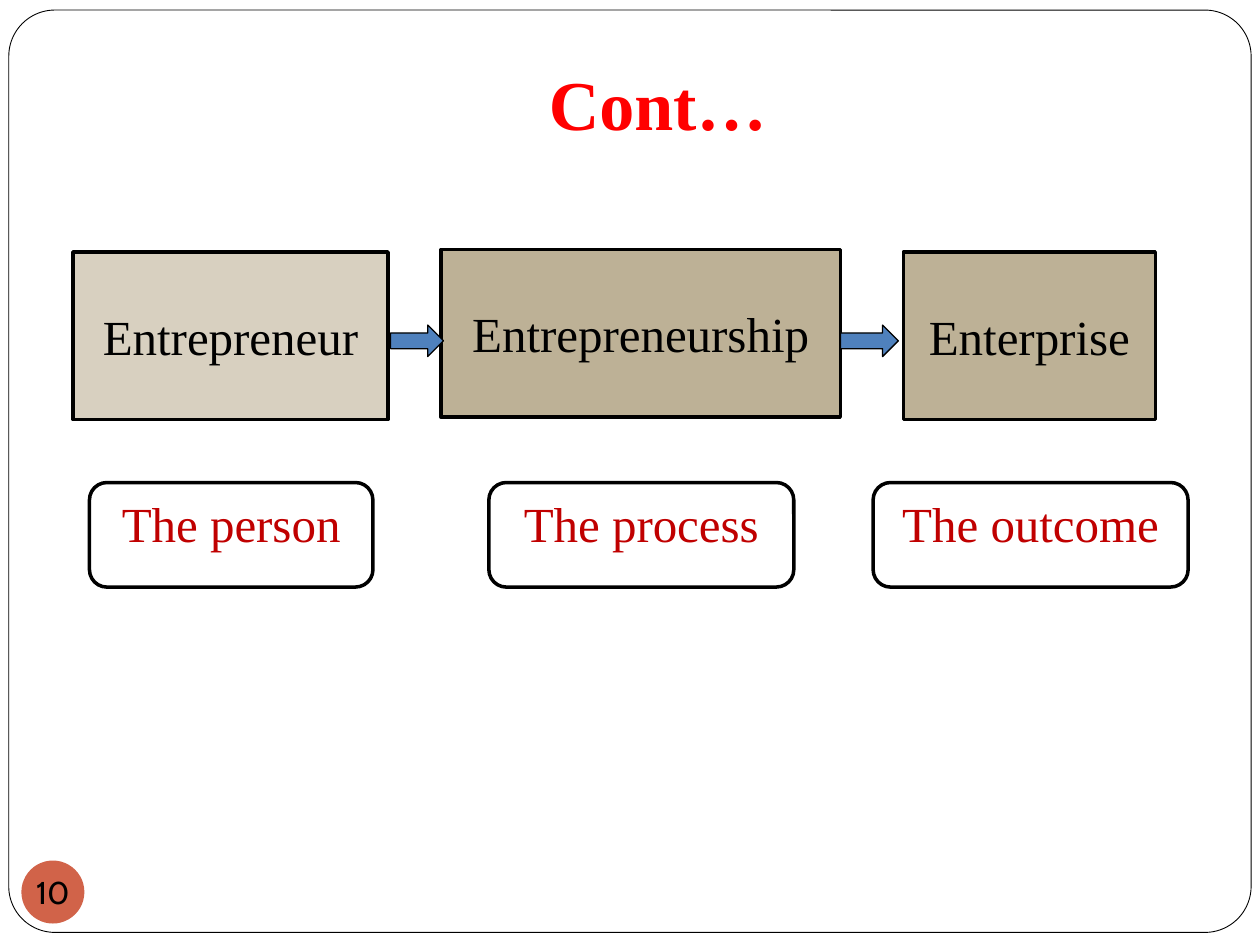
from dataclasses import dataclass

from pptx import Presentation
from pptx.dml.color import RGBColor
from pptx.enum.shapes import MSO_SHAPE as Preset
from pptx.enum.text import MSO_ANCHOR as Anchor, PP_ALIGN as Align
from pptx.util import Inches, Pt


@dataclass(frozen=True)
class Theme:
    serif: str = "Times New Roman"
    sans: str = "Cabin"
    title_size: int = 40
    label_size: int = 28
    number_size: int = 18
    ink: str = "000000"
    paper: str = "FFFFFF"
    title: str = "FF0000"
    role: str = "C00000"
    sand: str = "D8D0C0"
    khaki: str = "BDB196"
    arrow: str = "4F81BD"
    badge: str = "D16349"


THEME = Theme()


def write(holder, text, *, size=THEME.label_size, color=THEME.ink, font=THEME.serif,
          bold=False, anchor=Anchor.TOP, insets=(0.1, 0.05, 0.1, 0.05), wrap=True):
    frame = holder.text_frame
    frame.word_wrap = wrap
    frame.vertical_anchor = anchor
    (frame.margin_left, frame.margin_top,
     frame.margin_right, frame.margin_bottom) = map(Inches, insets)
    paragraph = frame.paragraphs[0]
    paragraph.alignment = Align.CENTER
    run = paragraph.add_run()
    run.text = text
    run.font.size = Pt(size)
    run.font.name = font
    run.font.bold = bold
    run.font.color.rgb = RGBColor.from_string(color)


def add_block(slide, preset, bounds, fill, line_width=0):
    block = slide.shapes.add_shape(preset, *map(Inches, bounds))
    block.shadow.inherit = False
    block.fill.solid()
    block.fill.fore_color.rgb = RGBColor.from_string(fill)
    if line_width:
        block.line.width = Pt(line_width)
        block.line.color.rgb = RGBColor.from_string(THEME.ink)
    else:
        block.line.fill.background()
    return block


def add_frame(slide):
    frame = add_block(slide, Preset.ROUNDED_RECTANGLE, (0.07, 0.08, 9.86, 7.32), THEME.paper, 0.5)
    frame.adjustments[0] = 0.05


def add_title(slide, text):
    title = slide.shapes.add_textbox(*map(Inches, (0.97, 0.25, 8.5, 1)))
    write(title, text, size=THEME.title_size, color=THEME.title, bold=True,
          anchor=Anchor.BOTTOM, insets=(0.1, 0.05, 0.1, 0.1))


def add_concept(slide, text, left, top, width, fill):
    concept = add_block(slide, Preset.RECTANGLE, (left, top, width, 1.33), fill, 2)
    write(concept, text, insets=(0.1, 0.43, 0.1, 0.05))


def add_role(slide, text, left, width):
    role = add_block(slide, Preset.ROUNDED_RECTANGLE, (left, 3.83, width, 0.83), THEME.paper, 2)
    write(role, text, color=THEME.role)


def add_step_arrow(slide, left, width):
    add_block(slide, Preset.RIGHT_ARROW, (left, 2.58, width, 0.25), THEME.arrow, 0.75)


def add_page_number(slide, number):
    badge = add_block(slide, Preset.OVAL, (0.17, 6.83, 0.5, 0.5), THEME.badge)
    write(badge, number, size=THEME.number_size, font=THEME.sans,
          anchor=Anchor.MIDDLE, insets=(0, 0, 0, 0), wrap=False)


def main():
    deck = Presentation()
    deck.slide_width, deck.slide_height = Inches(10), Inches(7.5)
    slide = deck.slides.add_slide(deck.slide_layouts[6])

    add_frame(slide)
    add_title(slide, "Cont…")
    for concept in (
        ("Entrepreneur", 0.58, 2, 2.5, THEME.sand),
        ("Entrepreneurship", 3.5, 1.98, 3.17, THEME.khaki),
        ("Enterprise", 7.17, 2, 2, THEME.khaki),
    ):
        add_concept(slide, *concept)
    for role in (
        ("The person", 0.71, 2.25),
        ("The process", 3.88, 2.42),
        ("The outcome", 6.93, 2.5),
    ):
        add_role(slide, *role)
    for left, width in ((3.1, 0.42), (6.67, 0.46)):
        add_step_arrow(slide, left, width)
    add_page_number(slide, "10")

    deck.save("out.pptx")


if __name__ == "__main__":
    main()
